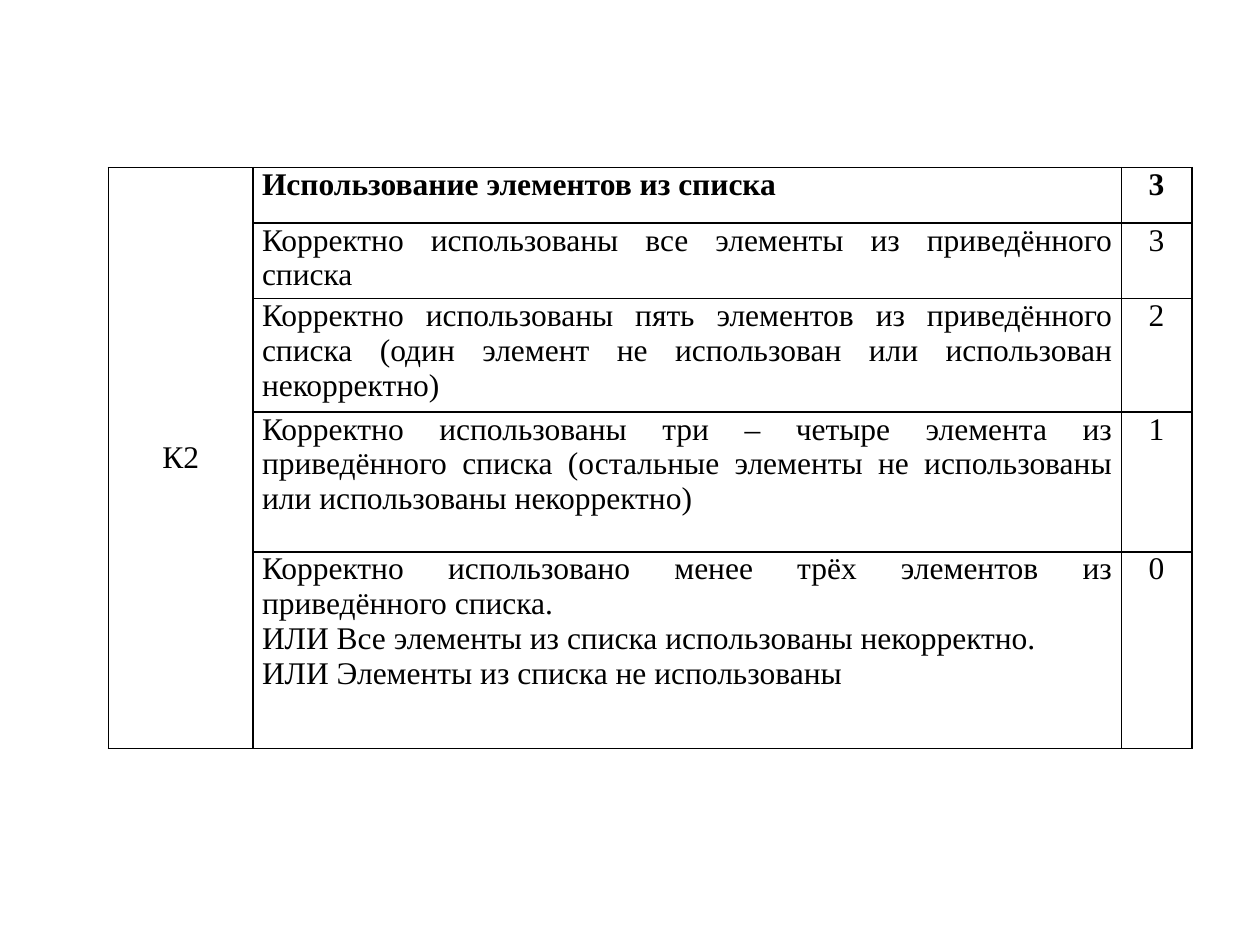
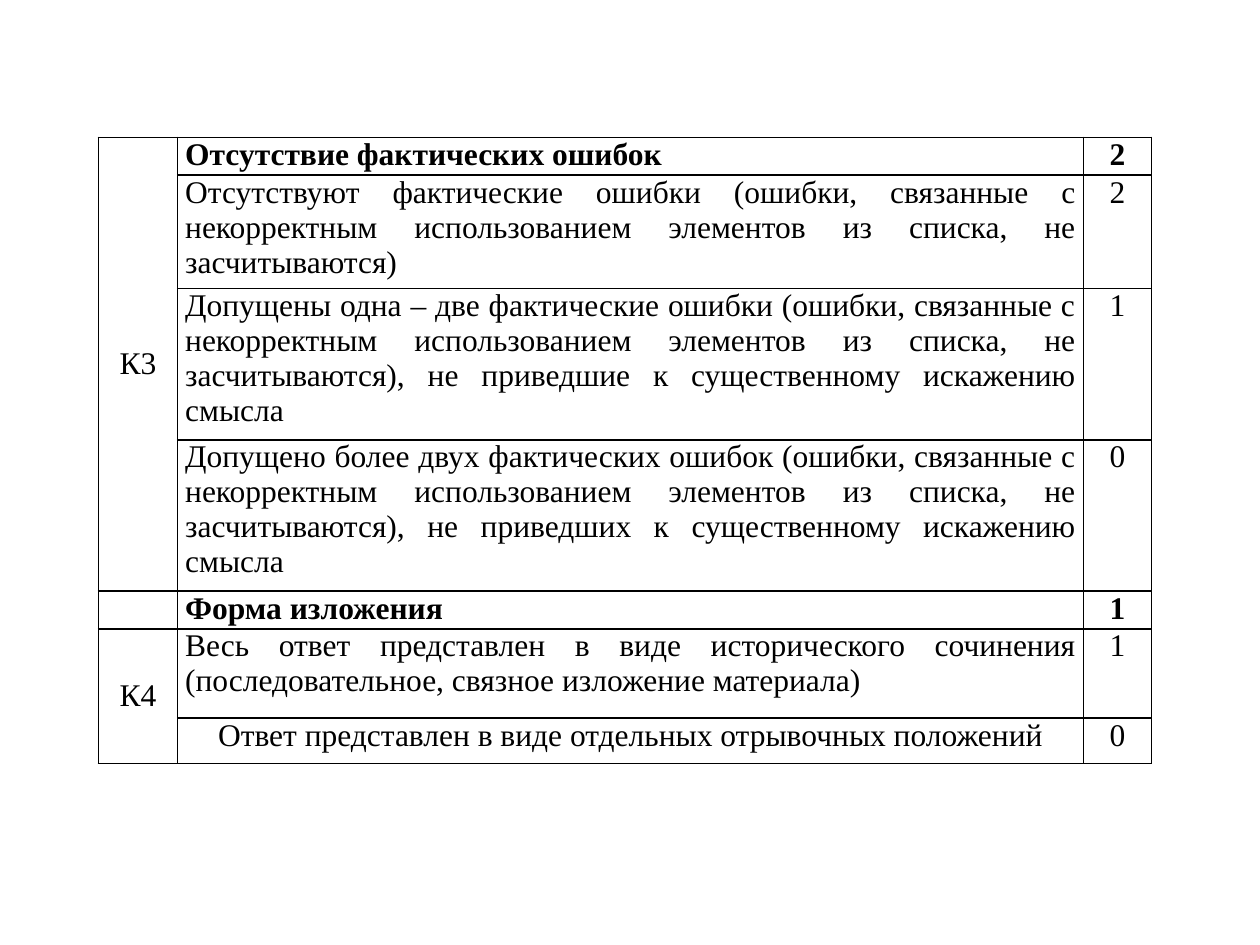
from lxml.etree import SubElement
from pptx import Presentation
from pptx.dml.color import RGBColor
from pptx.enum.text import MSO_ANCHOR as Anchor, PP_ALIGN as Align
from pptx.oxml.ns import qn
from pptx.util import Inches, Pt

COLORS = {"ink": "000000", "paper": "FFFFFF"}
FONT = "Times New Roman"
TEXT_SIZE = 18
BORDER_WIDTH = 1

# Each row: criterion code, requirement paragraphs, points, height in inches.
# A criterion code covers the rows below it that have None.
LIST_ROWS = [
    ("К2", ["Использование элементов из списка"], "3", 0.44),
    (None, ["Корректно использованы все элементы из приведённого списка"], "3", 0.6),
    (None, ["Корректно использованы пять элементов из приведённого списка "
            "(один элемент не использован или использован некорректно)"], "2", 0.9),
    (None, ["Корректно использованы три – четыре элемента из приведённого списка "
            "(остальные элементы не использованы или использованы некорректно)"], "1", 1.11),
    (None, ["Корректно использовано менее трёх элементов из приведённого списка.",
            "ИЛИ Все элементы из списка использованы некорректно.",
            "ИЛИ Элементы из списка не использованы"], "0", 1.56),
]
NOT_COUNTED = ("(ошибки, связанные с некорректным использованием элементов "
               "из списка, не засчитываются)")
ERROR_AND_FORM_ROWS = [
    ("К3", ["Отсутствие фактических ошибок"], "2", 0.3),
    (None, [f"Отсутствуют фактические ошибки {NOT_COUNTED}"], "2", 0.9),
    (None, [f"Допущены одна – две фактические ошибки {NOT_COUNTED}, "
            "не приведшие к существенному искажению смысла"], "1", 1.2),
    (None, [f"Допущено более двух фактических ошибок {NOT_COUNTED}, "
            "не приведших к существенному искажению смысла"], "0", 1.2),
    ("", ["Форма изложения"], "1", 0.3),
    ("К4", ["Весь ответ представлен в виде исторического сочинения "
            "(последовательное, связное изложение материала)"], "1", 0.71),
    (None, ["Ответ представлен в виде отдельных отрывочных положений"], "0", 0.36),
]


def style_cell(cell, side_inset):
    """Thin ink border on all sides, paper fill, side insets only."""
    cell.margin_left = cell.margin_right = Inches(side_inset)
    cell.margin_top = cell.margin_bottom = 0
    properties = cell._tc.get_or_add_tcPr()
    for side in ("lnL", "lnR", "lnT", "lnB"):
        border = SubElement(properties, qn(f"a:{side}"), w=str(Pt(BORDER_WIDTH)))
        ink = SubElement(border, qn("a:solidFill"))
        SubElement(ink, qn("a:srgbClr"), val=COLORS["ink"])
    cell.fill.solid()
    cell.fill.fore_color.rgb = RGBColor.from_string(COLORS["paper"])


def write_cell(cell, lines, align, bold=False):
    frame = cell.text_frame
    for index, line in enumerate(lines):
        paragraph = frame.add_paragraph() if index else frame.paragraphs[0]
        paragraph.alignment = align
        if not line:  # keep an empty cell from stretching its row
            SubElement(paragraph._p, qn("a:endParaRPr"), sz="1200")
            continue
        run = paragraph.add_run()
        run.text = line
        run.font.name = FONT
        run.font.size = Pt(TEXT_SIZE)
        run.font.bold = bold
        run.font.color.rgb = RGBColor.from_string(COLORS["ink"])


def add_criteria_table(slide, left, top, widths, rows, side_inset,
                       headings=(0,), centred=()):
    heights = [row[3] for row in rows]
    table = slide.shapes.add_table(
        len(rows), len(widths), Inches(left), Inches(top),
        Inches(sum(widths)), Inches(sum(heights))).table
    table.first_row = table.horz_banding = False
    for column, width in zip(table.columns, widths):
        column.width = Inches(width)
    for table_row, height in zip(table.rows, heights):
        table_row.height = Inches(height)
    for cell in table.iter_cells():
        style_cell(cell, side_inset)

    # Requirements and points
    for index, (code, requirement, points, _) in enumerate(rows):
        bold = index in headings
        align = Align.CENTER if index in centred else Align.JUSTIFY
        write_cell(table.cell(index, 1), requirement, align, bold)
        write_cell(table.cell(index, 2), [points], Align.CENTER, bold)

    # Criterion codes, merged down to the next code
    starts = [index for index, row in enumerate(rows) if row[0] is not None]
    for start, end in zip(starts, starts[1:] + [len(rows)]):
        code_cell = table.cell(start, 0)
        if end - start > 1:
            code_cell.merge(table.cell(end - 1, 0))
        code_cell.vertical_anchor = Anchor.MIDDLE
        write_cell(code_cell, [rows[start][0]], Align.CENTER)


def main():
    deck = Presentation()
    deck.slide_width, deck.slide_height = Inches(10), Inches(7.5)
    blank = deck.slide_layouts[6]

    # Use of the listed elements
    add_criteria_table(deck.slides.add_slide(blank), 0.86, 1.33,
                       [1.15, 6.89, 0.56], LIST_ROWS, 0.07)
    # Factual errors and form of the answer
    add_criteria_table(deck.slides.add_slide(blank), 0.78, 1.09,
                       [0.63, 7.19, 0.54], ERROR_AND_FORM_ROWS, 0.06,
                       headings=(0, 4), centred=(6,))
    deck.save("out.pptx")


if __name__ == "__main__":
    main()
